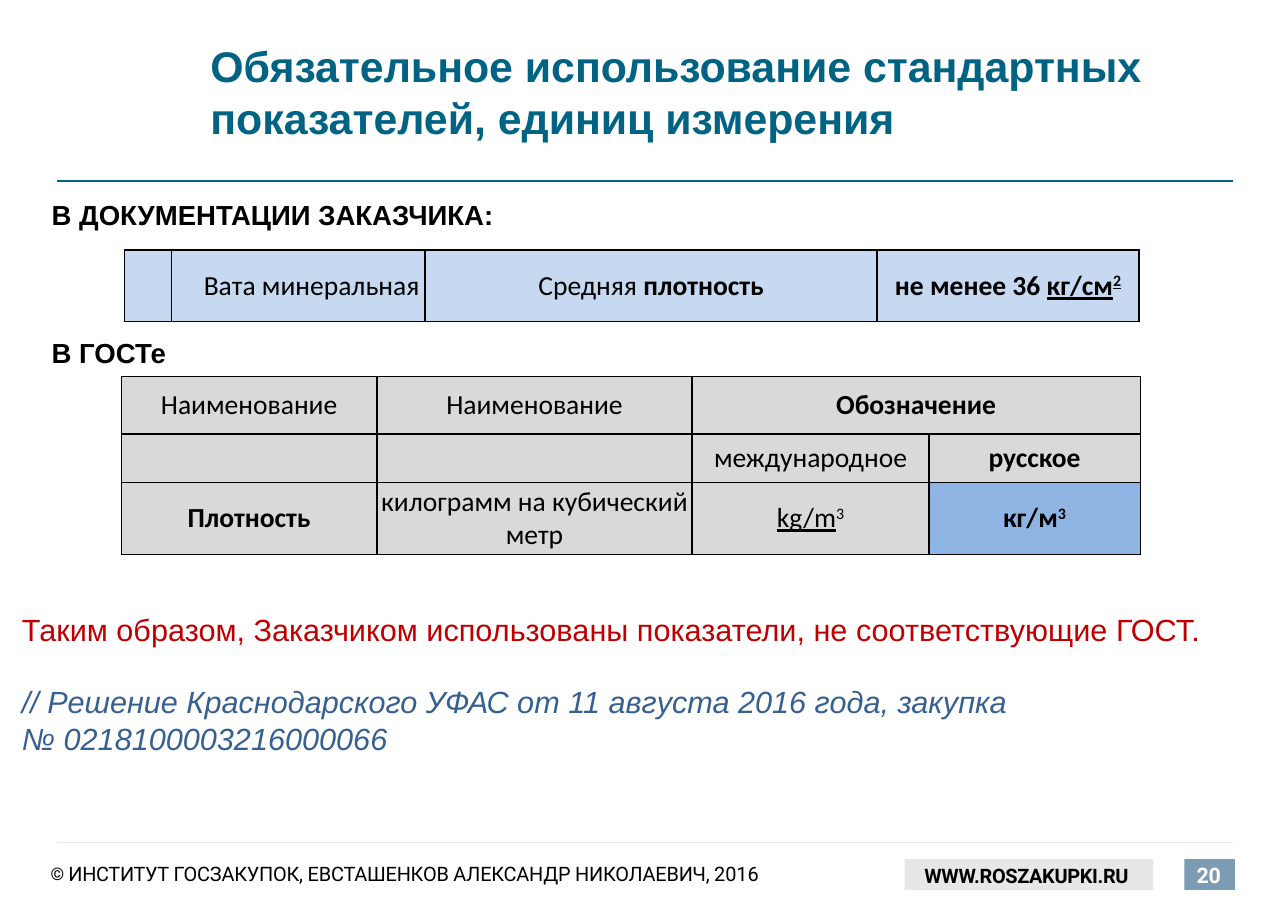
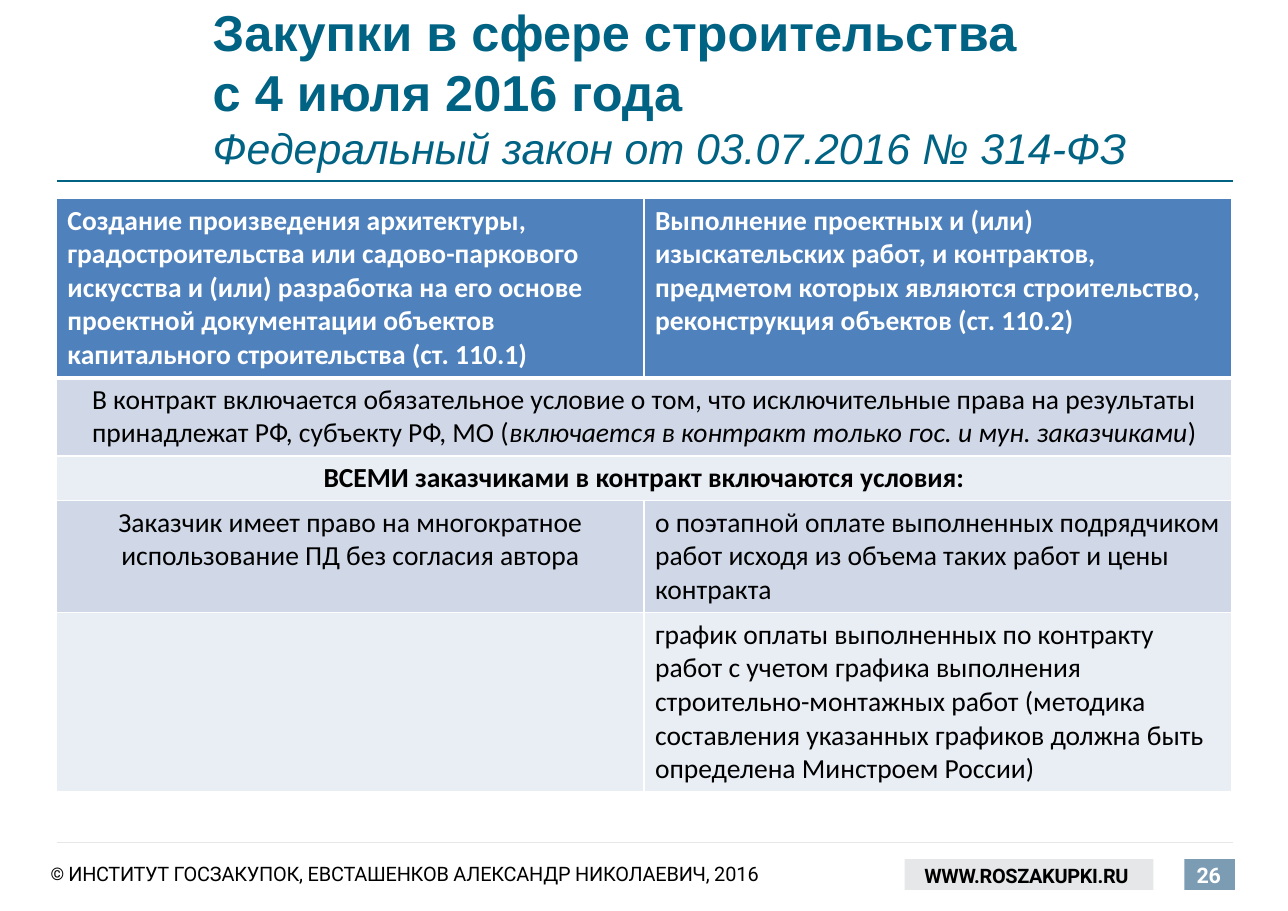
from dataclasses import dataclass
from pptx import Presentation
from pptx.dml.color import RGBColor
from pptx.enum.shapes import MSO_CONNECTOR, MSO_SHAPE
from pptx.enum.text import MSO_ANCHOR, PP_ALIGN
from pptx.oxml.ns import qn
from pptx.util import Pt
from lxml.etree import SubElement


@dataclass(frozen=True)
class Theme:
    # Colours
    teal: str = "006384"
    black: str = "000000"
    white: str = "FFFFFF"
    rule: str = "E6E7E8"
    page: str = "7C9CB4"
    red: str = "C00000"
    source: str = "376092"
    customer: str = "C6D9F1"
    standard: str = "D9D9D9"
    accent: str = "8EB4E3"
    head: str = "4F81BD"
    band: str = "D0D8E8"
    band_light: str = "E9EDF4"
    # Fonts and sizes
    sans: str = "Arial"
    table: str = "Calibri"
    footer: str = "Roboto"
    title: float = 28
    title_big: float = 33
    note: float = 20
    body: float = 18
    page_no: float = 14
    small: float = 13
    sign: float = 19.5


T = Theme()
WIDTH, HEIGHT = 841.68, 595.44
LEFT, RIGHT = 37.4, 805.7
CENTER = PP_ALIGN.CENTER
BOLD, ITALIC = {"bold": True}, {"italic": True}


# Text helpers
def add_runs(p, runs, font, size, color, align=None):
    """Each run is a string or a (string, overrides) pair."""
    if align is not None:
        p.alignment = align
    for item in runs:
        text, fmt = (item, {}) if isinstance(item, str) else item
        r = p.add_run()
        r.text = text
        r.font.name = font
        r.font.size = Pt(fmt.get("size", size))
        r.font.color.rgb = RGBColor.from_string(fmt.get("color", color))
        r.font.bold = fmt.get("bold", False)
        r.font.italic = fmt.get("italic", False)
        r.font.underline = fmt.get("underline", False)
        for key in ("baseline", "spc"):
            if key in fmt:
                r.font._element.set(key, str(fmt[key]))


def add_text(s, box, paragraphs, font, size, color, align=None,
             anchor=MSO_ANCHOR.MIDDLE, inset=0, wrap=True, gap=0):
    tf = s.shapes.add_textbox(*map(Pt, box)).text_frame
    tf.word_wrap = wrap
    tf.vertical_anchor = anchor
    tf.margin_left = tf.margin_right = Pt(inset)
    tf.margin_top = tf.margin_bottom = Pt(inset)
    for i, runs in enumerate(paragraphs):
        p = tf.add_paragraph() if i else tf.paragraphs[0]
        if i and gap:
            p.space_before = Pt(gap)
        add_runs(p, runs, font, size, color, align)
    return tf


# Shape helpers
def add_rule(s, y, color, width):
    line = s.shapes.add_connector(MSO_CONNECTOR.STRAIGHT,
                                  Pt(LEFT), Pt(y), Pt(RIGHT), Pt(y))
    line.line.color.rgb = RGBColor.from_string(color)
    line.line.width = Pt(width)
    SubElement(line._element.spPr, qn("a:effectLst"))


def add_panel(s, box, color):
    sp = s.shapes.add_shape(MSO_SHAPE.RECTANGLE, *map(Pt, box))
    sp.shadow.inherit = False
    sp.fill.solid()
    sp.fill.fore_color.rgb = RGBColor.from_string(color)
    sp.line.fill.background()


# Table helpers
def set_borders(cell, color, bottom=1):
    tc_pr = cell._tc.get_or_add_tcPr()
    for side, width in (("L", 1), ("R", 1), ("T", 1), ("B", bottom)):
        ln = SubElement(tc_pr, qn(f"a:ln{side}"), w=str(Pt(width)))
        fill = SubElement(ln, qn("a:solidFill"))
        SubElement(fill, qn("a:srgbClr"), val=color)


def make_table(s, left, top, cols, rows, border, fills, head_rule=1):
    frame = s.shapes.add_table(len(rows), len(cols), Pt(left), Pt(top),
                               Pt(sum(cols)), Pt(sum(rows)))
    table = frame.table
    table.first_row = table.horz_banding = False
    for col, width in zip(table.columns, cols):
        col.width = Pt(width)
    for i, (row, height) in enumerate(zip(table.rows, rows)):
        row.height = Pt(height)
        for cell in row.cells:
            # The rule below the first row is shared with the second row
            set_borders(cell, border, head_rule if i == 0 else 1)
            cell.fill.solid()
            cell.fill.fore_color.rgb = RGBColor.from_string(fills[i])
    return table


def fill_cell(cell, runs, color=T.black, align=CENTER):
    add_runs(cell.text_frame.paragraphs[0], runs, T.table, T.body, color, align)


def compact(table):
    for cell in table.iter_cells():
        cell.margin_left = cell.margin_right = 0
        cell.margin_top = cell.margin_bottom = 0
        cell.vertical_anchor = MSO_ANCHOR.MIDDLE


# Shared parts: title, rules and footer
def add_footer(s, number, top):
    site, page = (591.1, top, 162.7, 20), (774, top, 33.1, 20)
    add_panel(s, site, T.rule)
    add_panel(s, page, T.page)
    add_rule(s, top - 10.8, T.rule, 0.85)
    add_text(s, (site[0] + 13, top - 4.3, 171, 30),
             [[("WWW.ROSZAKUPKI.RU", {"bold": True, "spc": -20})]],
             T.footer, T.small, T.black)
    add_text(s, (page[0] - 2, top - 5.5, 36, 31),
             [[(str(number), {"bold": True, "spc": -20})]],
             T.footer, T.page_no, T.white, CENTER)
    tf = add_text(s, (33.1, top - 3.6, 491.8, 29.5),
                  [[("© ", {"size": T.sign, "baseline": 4000}),
                    ("ИНСТИТУТ ", {"spc": -20}),
                    ("ГОСЗАКУПОК, ЕВСТАШЕНКОВ АЛЕКСАНДР НИКОЛАЕВИЧ, ",
                     {"spc": -10}),
                    "2016"]], T.footer, T.small, T.black)
    tf.paragraphs[0].line_spacing = Pt(14.8)


def new_slide(prs, number, title_box, title):
    s = prs.slides.add_slide(prs.slide_layouts[6])
    add_rule(s, 118.1, T.teal, 1.42)
    add_footer(s, number, 561.6)
    add_text(s, title_box, title, T.sans, T.title, T.teal)
    return s


# Slide 20: customer's wording against the standard
def add_label(s, left, top, text):
    add_text(s, (left, top, 300, 28.8), [[(text, BOLD)]], T.sans, T.body,
             T.black, anchor=MSO_ANCHOR.TOP, inset=3.6, wrap=False)


def add_customer_table(s, left, top):
    table = make_table(s, left, top, [31, 165.6, 295.4, 171.2], [46.8],
                       T.black, [T.customer])
    compact(table)
    cells = table.rows[0].cells
    cells[1].margin_left = Pt(21)
    fill_cell(cells[1], ["Вата минеральная"], align=PP_ALIGN.LEFT)
    fill_cell(cells[2], ["Средняя ", ("плотность", BOLD)])
    unit = {"bold": True, "underline": True}
    fill_cell(cells[3], [("не менее 36\u00a0", BOLD), ("кг/см", unit),
                         ("2", {**unit, "baseline": 30000})])


def add_standard_table(s, left, top):
    table = make_table(s, left, top, [167, 206, 154.8, 138], [37.4, 31.7, 47.2],
                       T.black, [T.standard] * 3)
    compact(table)
    table.cell(0, 2).merge(table.cell(0, 3))
    content = {
        (0, 0): ["Наименование"],
        (0, 1): ["Наименование"],
        (0, 2): [("Обозначение", BOLD)],
        (1, 2): ["международное"],
        (1, 3): [("русское", BOLD)],
        (2, 0): [("Плотность", BOLD)],
        (2, 1): ["килограмм на кубический метр"],
        (2, 2): [("kg/m", {"underline": True}), ("3", {"baseline": 30000})],
        (2, 3): [("кг/м", BOLD), ("3", {"bold": True, "baseline": 30000})],
    }
    for (row, col), runs in content.items():
        fill_cell(table.cell(row, col), runs)
    table.cell(2, 3).fill.fore_color.rgb = RGBColor.from_string(T.accent)


def build_units_slide(prs):
    s = new_slide(prs, 20, (137.5, 25.9, 668.9, 67.7), [[
        ("Обязательное использование стандартных показателей, единиц измерения",
         BOLD)]])
    add_label(s, 30.2, 126, "В ДОКУМЕНТАЦИИ ЗАКАЗЧИКА:")
    add_customer_table(s, 81.2, 163.4)
    add_label(s, 30.2, 216, "В ГОСТе")
    add_standard_table(s, 79.3, 246.2)
    # Conclusion and source
    add_text(s, (10.8, 396, 830.88, 80), [
        ["Таким образом, Заказчиком использованы показатели, "
         "не соответствующие ГОСТ."],
        [("// Решение Краснодарского УФАС от 11 августа 2016 года, "
          "закупка №\u00a00218100003216000066",
          {"color": T.source, "italic": True})],
    ], T.sans, T.note, T.red, anchor=MSO_ANCHOR.TOP, inset=3.6, gap=23)


# Slide 26: contract terms in construction
def add_terms_table(s, left, top, width):
    heights = [22 * lines + 7.2 for lines in (5, 2, 1, 3, 5)]
    table = make_table(s, left, top, [width / 2] * 2, heights, T.white,
                       [T.head, T.band, T.band_light, T.band, T.band_light],
                       head_rule=3)
    # Header
    headings = (
        "Создание произведения архитектуры, градостроительства или "
        "садово-паркового искусства и (или) разработка на его основе "
        "проектной документации объектов капитального строительства "
        "(ст. 110.1)",
        "Выполнение проектных и (или) изыскательских работ, и контрактов, "
        "предметом которых являются строительство, реконструкция объектов "
        "(ст. 110.2)")
    for cell, text in zip(table.rows[0].cells, headings):
        fill_cell(cell, [(text, BOLD)], T.white, PP_ALIGN.LEFT)
    # Terms shared by both columns
    shared = (
        ["В контракт включается обязательное условие о том, что "
         "исключительные права на результаты принадлежат РФ, субъекту РФ, МО (",
         ("включается в контракт только гос. и мун. заказчиками", ITALIC), ")"],
        [("ВСЕМИ заказчиками в контракт включаются условия:", BOLD)])
    for row, runs in enumerate(shared, 1):
        table.cell(row, 0).merge(table.cell(row, 1))
        fill_cell(table.cell(row, 0), runs)
    # Terms by column
    fill_cell(table.cell(3, 0), ["Заказчик имеет право на многократное "
                                 "использование ПД без согласия автора"])
    own = ("о поэтапной оплате выполненных подрядчиком работ исходя из объема "
           "таких работ и цены контракта",
           "график оплаты выполненных по контракту работ с учетом графика "
           "выполнения строительно-монтажных работ (методика составления "
           "указанных графиков должна быть определена Минстроем России)")
    for row, text in enumerate(own, 3):
        fill_cell(table.cell(row, 1), [text], align=PP_ALIGN.LEFT)


def build_construction_slide(prs):
    big = {"bold": True, "size": T.title_big}
    s = new_slide(prs, 26, (139, 0, 668.9, 113.8), [
        [("Закупки в сфере строительства", big)],
        [("с 4 июля 2016 года", big)],
        [("Федеральный закон от 03.07.2016 № 314-ФЗ", ITALIC)]])
    add_terms_table(s, 36.9, 129.6, 768)


def main():
    prs = Presentation()
    prs.slide_width, prs.slide_height = Pt(WIDTH), Pt(HEIGHT)
    build_units_slide(prs)
    build_construction_slide(prs)
    prs.save("out.pptx")


if __name__ == "__main__":
    main()
